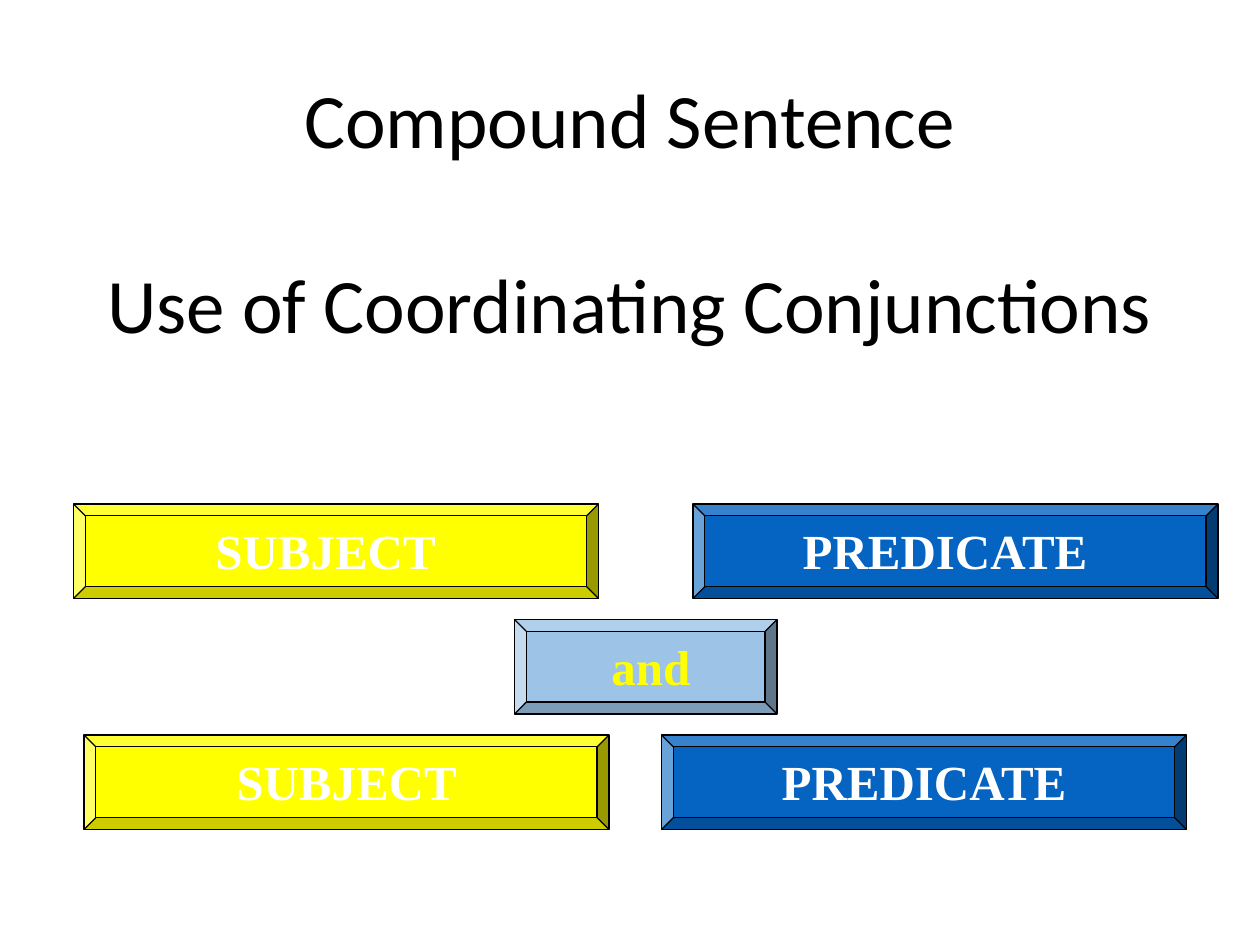
from pptx import Presentation
from pptx.dml.color import RGBColor
from pptx.enum.shapes import MSO_SHAPE
from pptx.enum.text import MSO_ANCHOR, MSO_AUTO_SIZE, PP_ALIGN
from pptx.util import Pt

PX = 9525
BLACK = RGBColor(0x00, 0x00, 0x00)
WHITE = RGBColor(0xFF, 0xFF, 0xFF)
YELLOW = RGBColor(0xFF, 0xFF, 0x00)
BLUE = RGBColor(0x05, 0x63, 0xC1)
LIGHT_BLUE = RGBColor(0x9D, 0xC3, 0xE6)

BLOCK_WIDTH, BLOCK_HEIGHT = 400, 72
LABEL_WIDTH, LABEL_HEIGHT, LABEL_DROP = 352, 55, 8


def emu(*lengths):
    return [length * PX for length in lengths]


def add_run(paragraph, text, font_name, size, color, bold=False):
    paragraph.alignment = PP_ALIGN.CENTER
    run = paragraph.add_run()
    run.text = text
    run.font.name = font_name
    run.font.size = Pt(size)
    run.font.bold = bold
    run.font.color.rgb = color


def add_heading(slide, left, top, width, height):
    heading = slide.shapes.title
    heading.left, heading.top, heading.width, heading.height = emu(left, top, width, height)
    frame = heading.text_frame
    frame.word_wrap = True
    frame.vertical_anchor = MSO_ANCHOR.MIDDLE
    topic = frame.paragraphs[0]
    add_run(topic, "Compound Sentence", "Calibri", 44, BLACK)
    subtopic = frame.add_paragraph()
    subtopic.space_before = Pt(53)
    add_run(subtopic, "Use of Coordinating Conjunctions", "Calibri", 44, BLACK)


def add_block(slide, left, top, width, fill, word, color, label_shift, label_width):
    block = slide.shapes.add_shape(MSO_SHAPE.BEVEL, *emu(left, top, width, BLOCK_HEIGHT))
    block.shadow.inherit = False
    block.fill.solid()
    block.fill.fore_color.rgb = fill
    block.line.color.rgb = BLACK
    block.line.width = Pt(0.75)

    label = slide.shapes.add_textbox(
        *emu(left + label_shift, top + LABEL_DROP, label_width, LABEL_HEIGHT))
    frame = label.text_frame
    frame.word_wrap = True
    frame.auto_size = MSO_AUTO_SIZE.SHAPE_TO_FIT_TEXT
    add_run(frame.paragraphs[0], word, "Times New Roman", 28, color, bold=True)


def add_clause(slide, subject_left, predicate_left, top, label_shift):
    for left, fill, word in ((subject_left, YELLOW, "SUBJECT"),
                             (predicate_left, BLUE, "PREDICATE")):
        add_block(slide, left, top, BLOCK_WIDTH, fill, word, WHITE, label_shift, LABEL_WIDTH)


def main():
    deck = Presentation()
    deck.slide_width, deck.slide_height = emu(960, 720)
    slide = deck.slides.add_slide(deck.slide_layouts[5])
    add_heading(slide, 32, 24, 896, 272)
    add_clause(slide, 56, 528, 384, 16)
    add_block(slide, 392, 472, 200, LIGHT_BLUE, "and", YELLOW, 32, 144)
    add_clause(slide, 64, 504, 560, 24)
    deck.save("out.pptx")


if __name__ == "__main__":
    main()
